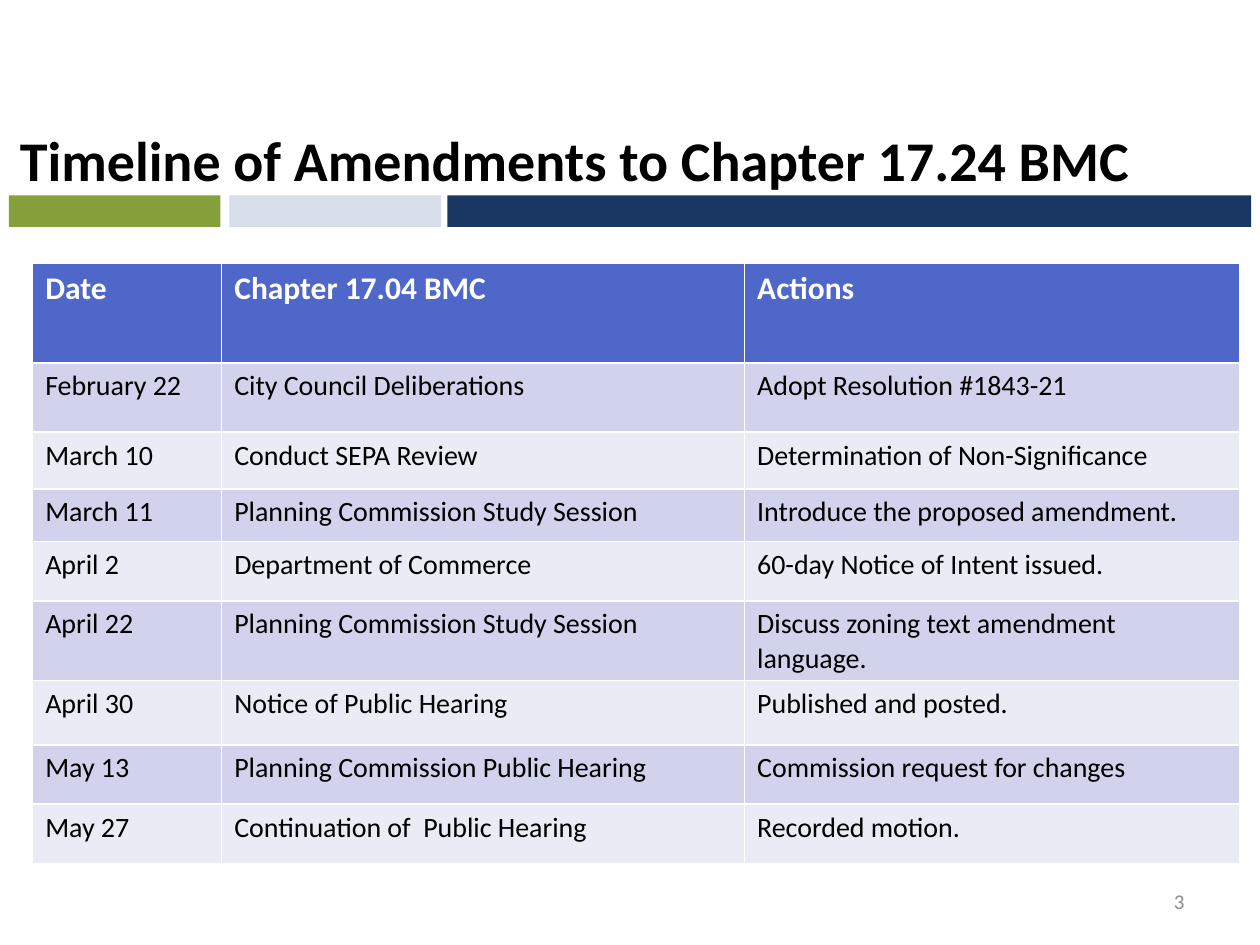
from pptx import Presentation
from pptx.dml.color import RGBColor
from pptx.enum.shapes import MSO_SHAPE
from pptx.enum.text import MSO_ANCHOR, PP_ALIGN
from pptx.util import Inches, Pt

COLORS = {
    "navy": "1A3662",
    "green": "86A13C",
    "mist": "D7DEEA",
    "header": "4E67C8",
    "odd_row": "D0D3EB",
    "even_row": "E9EBF5",
    "black": "000000",
    "white": "FFFFFF",
    "gray": "8C8C8C",
}

FORMATS = {
    "title": {"size": Pt(32), "bold": True, "color": "black"},
    "header": {"size": Pt(18), "bold": True, "color": "white"},
    "body": {"size": Pt(16), "bold": False, "color": "black"},
    "number": {"size": Pt(12), "bold": False, "color": "gray"},
}

BANDS = [("navy", 3.55, 6.38), ("green", 0.07, 1.68), ("mist", 1.82, 1.68)]

COLUMN_WIDTHS = [1.5, 4.15, 3.93]
ROW_HEIGHTS = [0.79, 0.55, 0.45, 0.42, 0.47, 0.52, 0.51, 0.47, 0.47]
TIMELINE = [
    ("Date", "Chapter 17.04 BMC", "Actions"),
    ("February 22", "City Council Deliberations", "Adopt Resolution #1843-21"),
    ("March 10", "Conduct SEPA Review", "Determination of Non-Significance"),
    ("March 11", "Planning Commission Study Session", "Introduce the proposed amendment."),
    ("April 2", "Department of Commerce", "60-day Notice of Intent issued."),
    ("April 22", "Planning Commission Study Session", "Discuss zoning text amendment language."),
    ("April 30", "Notice of Public Hearing", "Published and posted."),
    ("May 13", "Planning Commission Public Hearing", "Commission request for changes"),
    ("May 27", "Continuation of  Public Hearing", "Recorded motion."),
]


def rgb(color):
    return RGBColor.from_string(COLORS[color])


def paint(target, color):
    target.fill.solid()
    target.fill.fore_color.rgb = rgb(color)


def write(frame, text, style, align=PP_ALIGN.LEFT):
    paragraph = frame.paragraphs[0]
    paragraph.alignment = align
    run = paragraph.add_run()
    run.text = text
    values = {"name": "Calibri", **FORMATS[style]}
    run.font.color.rgb = rgb(values.pop("color"))
    for attribute, value in values.items():
        setattr(run.font, attribute, value)


def add_band(slide, color, left, width):
    band = slide.shapes.add_shape(
        MSO_SHAPE.RECTANGLE, Inches(left), Inches(1.55), Inches(width), Inches(0.25)
    )
    band.shadow.inherit = False
    paint(band, color)
    band.line.fill.background()


def add_text(slide, box, text, style, anchor, align=PP_ALIGN.LEFT):
    frame = slide.shapes.add_textbox(*map(Inches, box)).text_frame
    frame.word_wrap = True
    frame.vertical_anchor = anchor
    write(frame, text, style, align)


def add_timeline(slide):
    timeline = slide.shapes.add_table(
        len(TIMELINE), len(COLUMN_WIDTHS), Inches(0.26), Inches(2.09),
        Inches(sum(COLUMN_WIDTHS)), Inches(sum(ROW_HEIGHTS)),
    ).table
    for column, width in zip(timeline.columns, COLUMN_WIDTHS):
        column.width = Inches(width)
    for index, (row, height, entries) in enumerate(zip(timeline.rows, ROW_HEIGHTS, TIMELINE)):
        row.height = Inches(height)
        style = "body" if index else "header"
        stripe = ("odd_row" if index % 2 else "even_row") if index else "header"
        for cell, entry in zip(row.cells, entries):
            paint(cell, stripe)
            write(cell.text_frame, entry, style)


def main():
    deck = Presentation()
    deck.slide_width, deck.slide_height = Inches(10), Inches(7.5)
    slide = deck.slides.add_slide(deck.slide_layouts[6])
    for band in BANDS:
        add_band(slide, *band)
    add_text(slide, (0.06, 0.08, 9.44, 1.5), "Timeline of Amendments to Chapter 17.24 BMC",
             "title", MSO_ANCHOR.BOTTOM)
    add_text(slide, (7.17, 6.95, 2.33, 0.4), "3", "number", MSO_ANCHOR.MIDDLE, PP_ALIGN.RIGHT)
    add_timeline(slide)
    deck.save("out.pptx")


if __name__ == "__main__":
    main()
